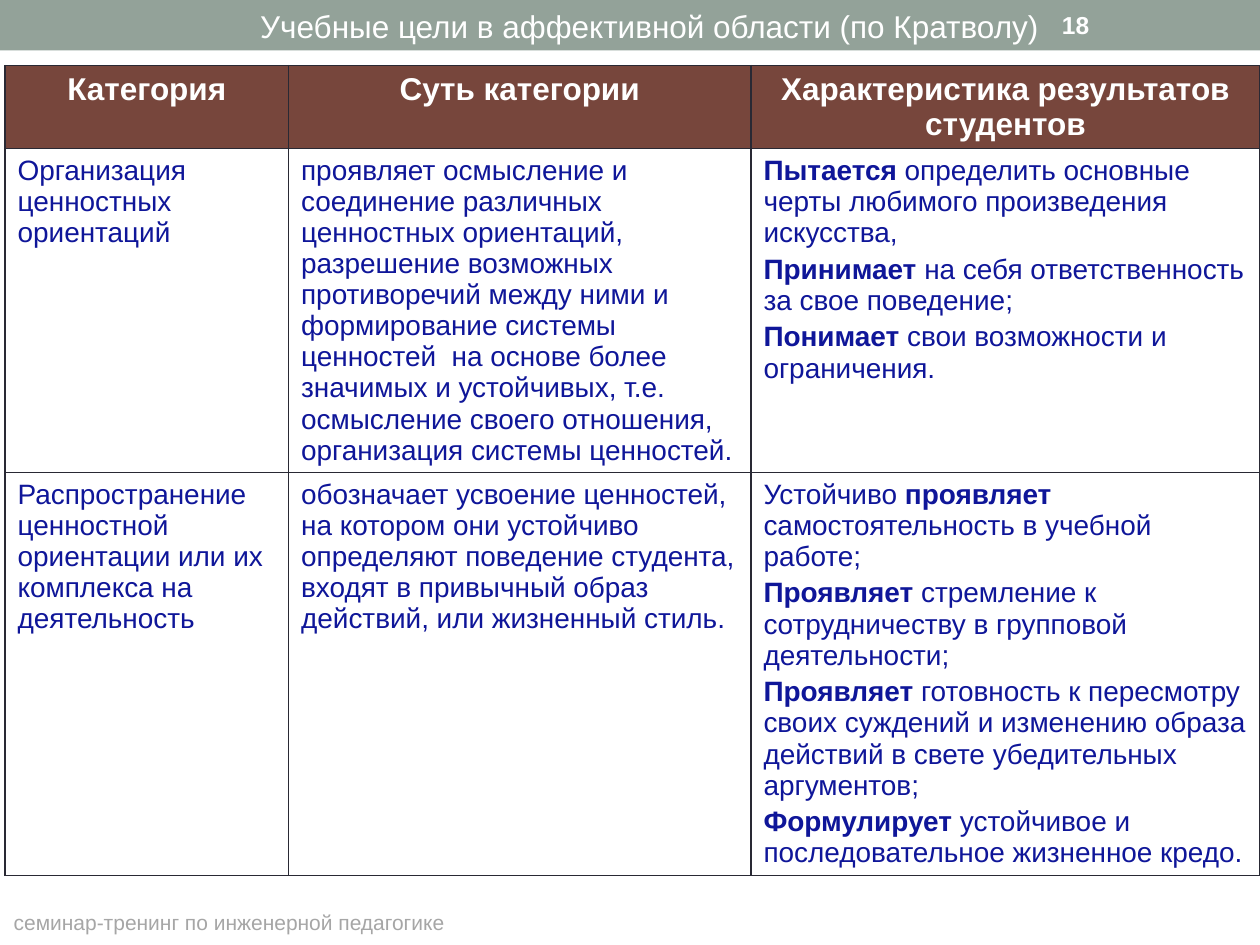
from lxml import etree
from pptx import Presentation
from pptx.dml.color import RGBColor
from pptx.enum.shapes import MSO_SHAPE
from pptx.enum.text import MSO_ANCHOR, PP_ALIGN
from pptx.oxml.ns import qn
from pptx.util import Inches, Pt

RECTANGLE = MSO_SHAPE.RECTANGLE
LEFT, CENTER = PP_ALIGN.LEFT, PP_ALIGN.CENTER
TOP, MIDDLE = MSO_ANCHOR.TOP, MSO_ANCHOR.MIDDLE

SAGE = RGBColor(0x93, 0xA2, 0x99)
BROWN = RGBColor(0x77, 0x46, 0x3C)
WHITE = RGBColor(0xFF, 0xFF, 0xFF)
NAVY = RGBColor(0x0F, 0x16, 0x99)
GRAY = RGBColor(0xA6, 0xA6, 0xA6)
BORDER = RGBColor(0x29, 0x29, 0x34)


def add_span(para, text, size, color, bold=False):
    span = para.add_run()
    span.text = text
    span.font.color.rgb = color
    for name, value in {"name": "Arial", "size": Pt(size), "bold": bold}.items():
        setattr(span.font, name, value)


def add_borders(cell):
    properties = cell._tc.get_or_add_tcPr()
    for position, side in enumerate(("lnL", "lnR", "lnT", "lnB")):
        line = etree.Element(qn(f"a:{side}"), w=str(Pt(1)))
        fill = etree.SubElement(line, qn("a:solidFill"))
        etree.SubElement(fill, qn("a:srgbClr"), val=str(BORDER))
        properties.insert(position, line)


deck = Presentation()
deck.slide_width, deck.slide_height = Inches(10), Inches(7.5)
page = deck.slides.add_slide(deck.slide_layouts[6])

# Top band
band = page.shapes.add_shape(RECTANGLE, 0, 0, Inches(10), Inches(0.4))
band.shadow.inherit = False
band.fill.solid()
band.fill.fore_color.rgb = SAGE
band.line.fill.background()

# Table content: each cell is a list of paragraphs, each a list of (text, bold)
HEADERS = ["Категория", "Суть категории", "Характеристика результатов студентов"]
ROWS = [[[[(header, True)]] for header in HEADERS]]
ROWS += [
    [
        [[("Организация ценностных ориентаций", False)]],
        [[("проявляет осмысление и соединение различных ценностных ориентаций, "
           "разрешение возможных противоречий между ними и формирование системы "
           "ценностей  на основе более значимых и устойчивых, т.е. осмысление "
           "своего отношения, организация системы ценностей.", False)]],
        [
            [("Пытается", True),
             (" определить основные черты любимого произведения искусства,", False)],
            [("Принимает", True), (" на себя ответственность за свое поведение;", False)],
            [("Понимает", True), (" свои возможности и ограничения.", False)],
        ],
    ],
    [
        [[("Распространение ценностной ориентации или их комплекса на деятельность",
           False)]],
        [[("обозначает усвоение ценностей, на котором они устойчиво определяют "
           "поведение студента, входят в привычный образ действий, или жизненный "
           "стиль.", False)]],
        [
            [("Устойчиво ", False), ("проявляет", True),
             (" самостоятельность в учебной работе;", False)],
            [("Проявляет", True),
             (" стремление к сотрудничеству в групповой деятельности;", False)],
            [("Проявляет", True),
             (" готовность к пересмотру своих суждений и изменению образа действий "
              "в свете убедительных аргументов;", False)],
            [("Формулирует", True),
             (" устойчивое и последовательное жизненное кредо.", False)],
        ],
    ],
]
COLUMN_WIDTHS = [2.25, 3.67, 4.04]
ROW_HEIGHTS = [0.66, 2.57, 3.2]

# Table
table = page.shapes.add_table(
    len(ROWS), len(HEADERS), Inches(0.04), Inches(0.52),
    Inches(sum(COLUMN_WIDTHS)), Inches(sum(ROW_HEIGHTS))).table
table.horz_banding = False
for column, width in zip(table.columns, COLUMN_WIDTHS):
    column.width = Inches(width)
for row, height in zip(table.rows, ROW_HEIGHTS):
    row.height = Inches(height)

for row_index, row_cells in enumerate(ROWS):
    is_header = row_index == 0
    size, color, align = (18, WHITE, CENTER) if is_header else (16, NAVY, LEFT)
    for column_index, paragraphs in enumerate(row_cells):
        cell = table.cell(row_index, column_index)
        cell.fill.solid()
        cell.fill.fore_color.rgb = BROWN if is_header else WHITE
        add_borders(cell)
        for index, spans in enumerate(paragraphs):
            para = cell.text_frame.add_paragraph() if index else cell.text_frame.paragraphs[0]
            para.alignment = align
            if index:
                para.space_before = Pt(3.2)
            for text, bold in spans:
                add_span(para, text, size, color, bold)

# Title, page number and footer
LABELS = [
    ("Учебные цели в аффективной области (по Кратволу)",
     (0.51, 0.01, 9.29, 0.4), 18, WHITE, False, CENTER, TOP),
    ("18", (8.33, 0.02, 1.17, 0.36), 14, WHITE, True, LEFT, MIDDLE),
    ("семинар-тренинг по инженерной педагогике",
     (-0.43, 7.14, 4.5, 0.36), 12, GRAY, False, CENTER, MIDDLE),
]
for text, place, size, color, bold, align, anchor in LABELS:
    box = page.shapes.add_textbox(*[Inches(length) for length in place])
    box.text_frame.word_wrap = True
    box.text_frame.vertical_anchor = anchor
    para = box.text_frame.paragraphs[0]
    para.alignment = align
    add_span(para, text, size, color, bold)

deck.save("out.pptx")
